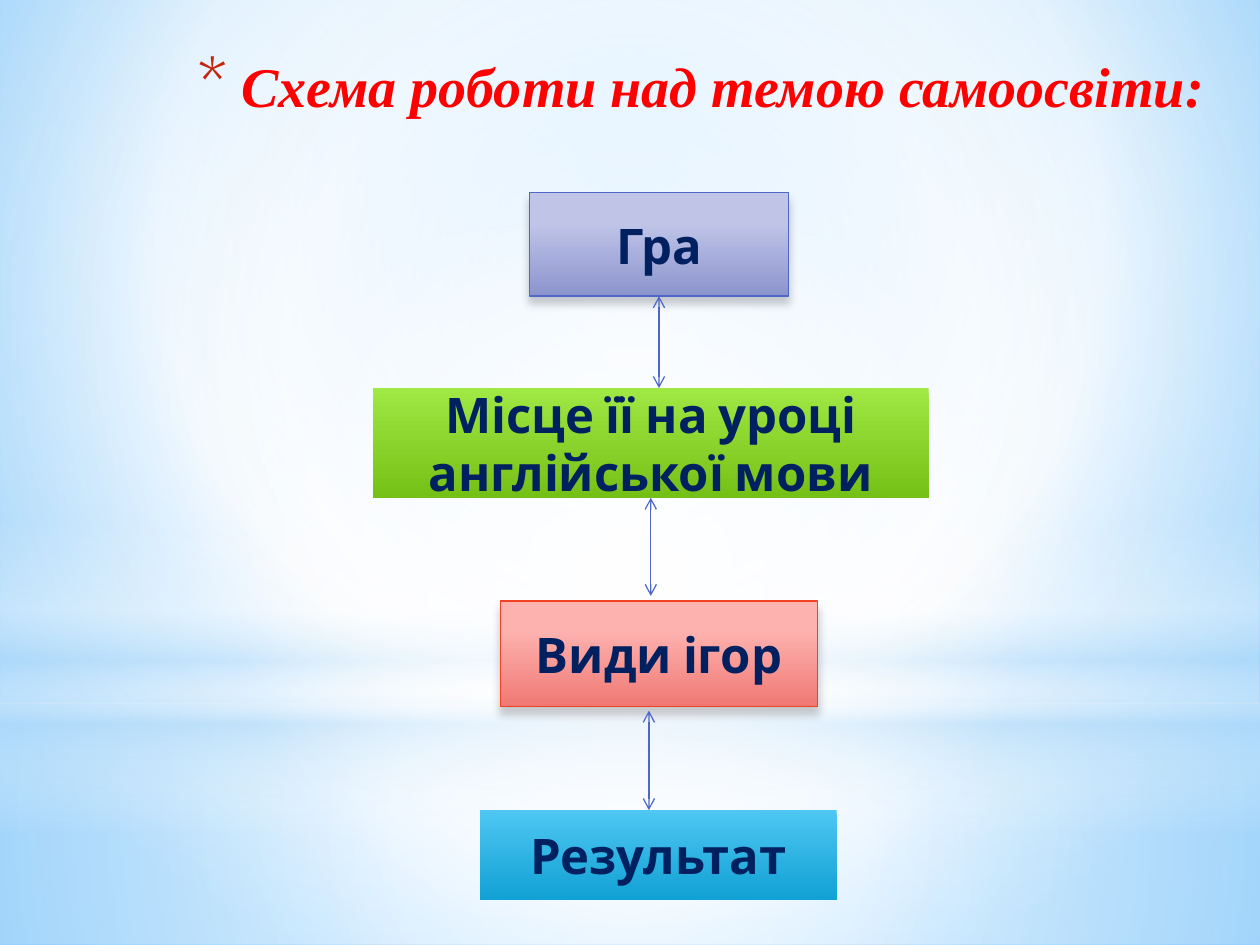
import pptx
import pptx.util
import pptx.dml.color
import pptx.enum.shapes
import pptx.enum.text
import pptx.oxml
import pptx.oxml.ns
from lxml import etree

qn = pptx.oxml.ns.qn
SHAPE = pptx.enum.shapes.MSO_SHAPE
ANCHOR = pptx.enum.text.MSO_ANCHOR
CENTER = pptx.enum.text.PP_ALIGN.CENTER

# Grid of 100 columns by 75 rows
WIDTH, HEIGHT = pptx.util.Inches(10), pptx.util.Inches(7.5)
COL, ROW = WIDTH / 100, HEIGHT / 75
MIDDLE = (50, 50, 50, 50)
NAVY, BLUE = "002060", "4E67C8"


def color(hex_code):
    return pptx.dml.color.RGBColor.from_string(hex_code)


def place(area, left, top, width, height):
    """Turn a cell range inside an area into slide lengths."""
    return (round((area[0] + left) * COL), round((area[1] + top) * ROW),
            round(width * COL), round(height * ROW))


def add(parent, tag, **attributes):
    child = etree.SubElement(parent, qn(tag))
    for key, value in attributes.items():
        child.set(key, str(value))
    return child


def add_color(parent, hex_code, opacity=100):
    node = add(parent, "a:srgbClr", val=hex_code)
    if opacity < 100:
        add(node, "a:alpha", val=opacity * 1000)


def set_gradient(fill, properties, stops, focus=None):
    """Fill top to bottom, or in circles around a focus rectangle."""
    fill.solid()
    gradient = etree.Element(qn("a:gradFill"), rotWithShape="1")
    stop_list = add(gradient, "a:gsLst")
    for position, *shade in stops:
        add_color(add(stop_list, "a:gs", pos=position * 1000), *shade)
    if focus:
        circle = add(gradient, "a:path", path="circle")
        add(circle, "a:fillToRect",
            **{side: share * 1000 for side, share in zip("ltrb", focus)})
    else:
        add(gradient, "a:lin", ang=90 * 60000, scaled=0)
    properties.replace(properties.find(qn("a:solidFill")), gradient)


def add_panel(slide, kind, bounds, stops, focus=None, outline=None):
    panel = slide.shapes.add_shape(kind, *bounds)
    panel.shadow.inherit = False
    set_gradient(panel.fill, panel.element.spPr, stops, focus)
    if outline:
        panel.line.color.rgb = color(outline)
        panel.line.width = pptx.util.Pt(0.75)
    else:
        panel.line.fill.background()
    return panel


def write(shape, text, size, font, hue, italic=False, anchor=ANCHOR.MIDDLE, bullet=None):
    frame = shape.text_frame
    frame.word_wrap = True
    frame.vertical_anchor = anchor
    paragraph = frame.paragraphs[0]
    paragraph.alignment = CENTER
    if bullet:
        sign, sign_color, percent, indent = bullet
        settings = paragraph._p.get_or_add_pPr()
        settings.set("marL", str(indent))
        settings.set("indent", str(-indent))
        add_color(add(settings, "a:buClr"), sign_color)
        add(settings, "a:buSzPct", val=percent * 1000)
        add(settings, "a:buFont", typeface="Cabin")
        add(settings, "a:buChar", char=sign)
    run = paragraph.add_run()
    run.text = text
    run.font.size = pptx.util.Pt(size)
    run.font.name = font
    run.font.bold = True
    run.font.italic = italic
    run.font.color.rgb = color(hue)


def add_shadow(shape):
    effects = shape.element.spPr.find(qn("a:effectLst"))
    shadow = add(effects, "a:outerShdw", blurRad=pptx.util.Pt(5), dist=pptx.util.Pt(4),
                 dir=90 * 60000, rotWithShape=0)
    add_color(shadow, "000000", 20)


def add_double_arrow(slide, area, x, top, bottom):
    left, start, _, length = place(area, x, top, 0, bottom - top)
    arrow = slide.shapes.add_connector(pptx.enum.shapes.MSO_CONNECTOR.STRAIGHT,
                                       left, start, left, start + length)
    arrow.line.color.rgb = color(BLUE)
    arrow.line.width = pptx.util.Pt(0.75)
    line = arrow.line._get_or_add_ln()
    for end in ("a:headEnd", "a:tailEnd"):
        add(line, end, type="arrow")
    add(arrow.element.spPr, "a:effectLst")
    return arrow


def draw_backdrop(slide, area):
    # Sky gradient behind everything
    background = slide.background.fill
    background.solid()
    set_gradient(background, slide.element.find(".//" + qn("p:bgPr")),
                 [(0, "9ED5FF"), (60, "FFFFFF"), (100, "5BB9FF")], (20, 10, 20, 60))
    # Ground, sky, horizon band and central glow
    width, horizon = area[2], 55.8
    layers = [
        (SHAPE.RECTANGLE, horizon, area[3] - horizon, MIDDLE,
         [(0, "FFFFFF", 91), (37, "FFFFFF", 76), (100, "B4DCFA", 79)]),
        (SHAPE.RECTANGLE, 0, horizon, MIDDLE,
         [(0, "FFFFFF", 89), (48, "FFFFFF", 62), (100, "B4DCFA", 79)]),
        (SHAPE.RECTANGLE, 41.2, 25, None,
         [(0, "FFFFFF", 0), (29, "FFFFFF", 30), (45, "B4DCFA", 40),
          (55, "FFFFFF", 26), (65, "B4DCFA", 60), (100, "FFFFFF", 0)]),
        (SHAPE.OVAL, 17.5, horizon, MIDDLE, [(0, "FFFFFF"), (56, "FFFFFF", 0)]),
    ]
    for kind, top, height, focus, stops in layers:
        add_panel(slide, kind, place(area, 0, top, width, height), stops, focus)


def draw_title(slide, area):
    heading = slide.shapes.add_textbox(*place(area, 0, 0, *area[2:]))
    write(heading, "Схема роботи над темою самоосвіти:", 32, "Times New Roman", "FF0000",
          italic=True, anchor=ANCHOR.TOP, bullet=("*", "C3260C", 128, round(3.5 * COL)))


def draw_chain(slide, area):
    # Steps: text, cells, gradient, outline of the raised ones
    steps = [
        ("Гра", (12.4, 0, 20.6, 8.2), [(28, "C0C5E8"), (100, "8C94CE")], BLUE),
        ("Місце її на уроці англійської мови", (0, 15.5, 44.1, 8.7),
         [(0, "A0E844"), (100, "75C016")], None),
        ("Види ігор", (10.1, 32.4, 25.2, 8.4), [(28, "FDB2AF"), (100, "F07873")], "F14124"),
        ("Результат", (8.5, 49, 28.3, 7.1), [(0, "4EC7F2"), (100, "11A1D4")], None),
    ]
    boxes = []
    for label, cells, stops, outline in steps:
        step = add_panel(slide, SHAPE.RECTANGLE, place(area, *cells), stops, outline=outline)
        if outline:
            add_shadow(step)
        write(step, label, 28, "Cabin", NAVY)
        boxes.append(step)
    # Two-way arrows; the first two start at the middle of a step's lower side
    arrows = [add_double_arrow(slide, area, *ends)
              for ends in [(22.7, 8.4, 15.5), (22.05, 24.2, 32), (21.9, 41.1, 49)]]
    for arrow, step in zip(arrows[:2], boxes):
        arrow.begin_connect(step, 2)


def main():
    deck = pptx.Presentation()
    deck.slide_width, deck.slide_height = WIDTH, HEIGHT
    slide = deck.slides.add_slide(deck.slide_layouts[6])
    draw_backdrop(slide, (0, 0, 100, 75))
    draw_title(slide, (13.3, 3.6, 84.7, 9.6))
    draw_chain(slide, (29.6, 15.3, 44.1, 56.1))
    deck.save("out.pptx")


if __name__ == "__main__":
    main()
